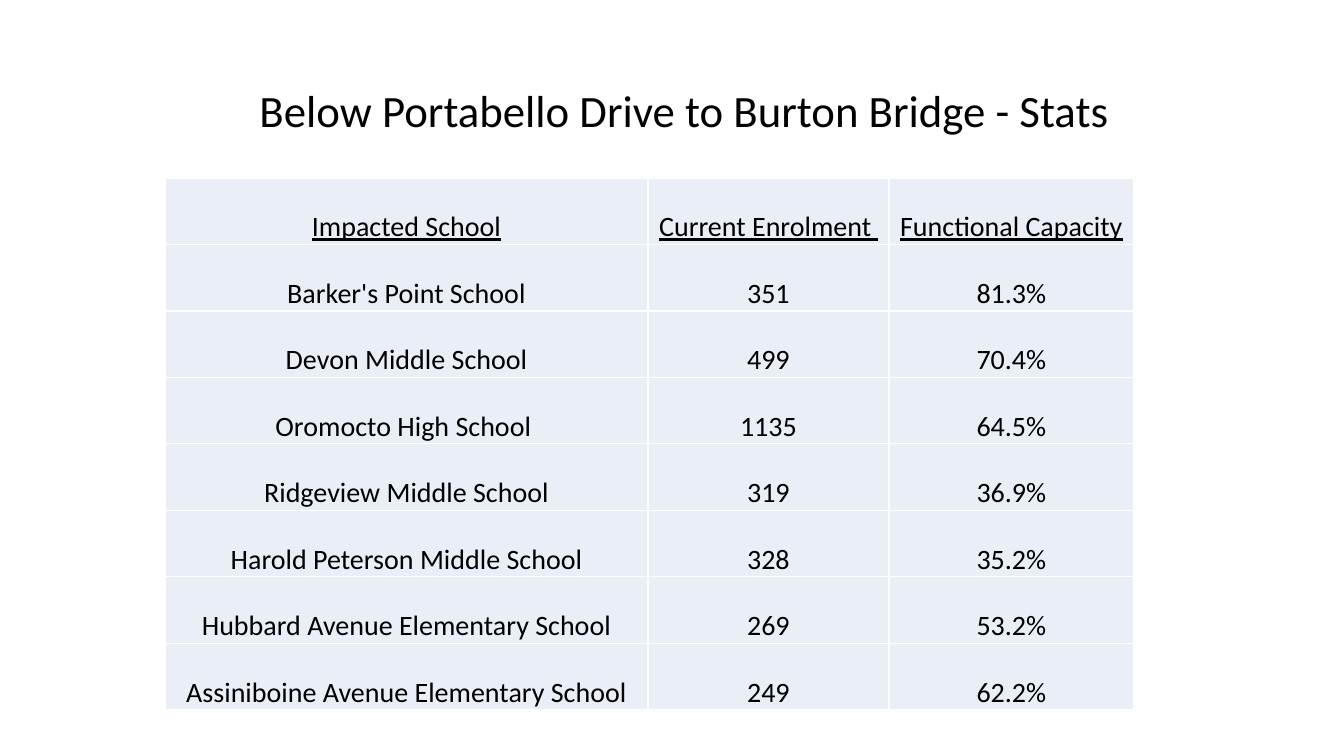
import lxml.etree
import pptx
import pptx.dml.color
import pptx.enum.text
import pptx.oxml.ns
import pptx.util

PX = 914400 / 100.8  # EMU in one px
FONT = "Calibri"
BLACK, WHITE, PALE_BLUE = "000000", "FFFFFF", "EAEFF7"

TITLE = "Below Portabello Drive to Burton Bridge - Stats"
HEADINGS = ("Impacted School", "Current Enrolment ", "Functional Capacity")
SCHOOLS = (
    ("Barker's Point School", "351", "81.3%"),
    ("Devon Middle School", "499", "70.4%"),
    ("Oromocto High School ", "1135", "64.5%"),
    ("Ridgeview Middle School", "319", "36.9%"),
    ("Harold Peterson Middle School", "328", "35.2%"),
    ("Hubbard Avenue Elementary School", "269", "53.2%"),
    ("Assiniboine Avenue Elementary School", "249", "62.2%"),
)
COLUMN_WIDTHS = (483, 241, 245)


def px(length):
    return pptx.util.Emu(round(length * PX))


def color(value):
    return pptx.dml.color.RGBColor.from_string(value)


def write(frame, text, size, anchor, underline=False):
    """Fill a text frame with one centred paragraph."""
    frame.word_wrap = True
    frame.vertical_anchor = anchor
    para = frame.paragraphs[0]
    para.text = text
    para.alignment = pptx.enum.text.PP_ALIGN.CENTER
    font = para.font
    font.name, font.size, font.underline = FONT, pptx.util.Pt(size), underline
    font.color.rgb = color(BLACK)
    return para


def add_borders(cell, value, points):
    properties = cell._tc.get_or_add_tcPr()
    for side in ("a:lnL", "a:lnR", "a:lnT", "a:lnB"):
        line = lxml.etree.SubElement(
            properties, pptx.oxml.ns.qn(side), w=str(pptx.util.Pt(points)))
        fill = lxml.etree.SubElement(line, pptx.oxml.ns.qn("a:solidFill"))
        lxml.etree.SubElement(fill, pptx.oxml.ns.qn("a:srgbClr"), val=value)


def add_title(page, left, top, width, height):
    box = page.shapes.add_textbox(px(left), px(top), px(width), px(height))
    para = write(box.text_frame, TITLE, 32, pptx.enum.text.MSO_ANCHOR.MIDDLE)
    para.line_spacing = 0.9


def add_school_table(page, left, top, height):
    rows = (HEADINGS,) + SCHOOLS
    table = page.shapes.add_table(
        len(rows), len(HEADINGS), px(left), px(top),
        px(sum(COLUMN_WIDTHS)), px(height)).table
    for column, width in zip(table.columns, COLUMN_WIDTHS):
        column.width = px(width)
    for row_index, values in enumerate(rows):
        table.rows[row_index].height = px(height / len(rows))
        for column_index, value in enumerate(values):
            cell = table.cell(row_index, column_index)
            # Borders come before the fill in the cell properties
            add_borders(cell, WHITE, 1)
            cell.fill.solid()
            cell.fill.fore_color.rgb = color(PALE_BLUE)
            cell.margin_left = cell.margin_right = cell.margin_top = px(1)
            cell.margin_bottom = 0
            bottom = pptx.enum.text.MSO_ANCHOR.BOTTOM
            cell.vertical_anchor = bottom
            write(cell.text_frame, value, 20, bottom, underline=row_index == 0)


def main():
    deck = pptx.Presentation()
    deck.slide_width, deck.slide_height = px(1344), px(756)
    page = deck.slides.add_slide(deck.slide_layouts[6])
    add_title(page, 93, 40, 1183, 146)
    add_school_table(page, 165, 178, 532)
    deck.save("out.pptx")


if __name__ == "__main__":
    main()
